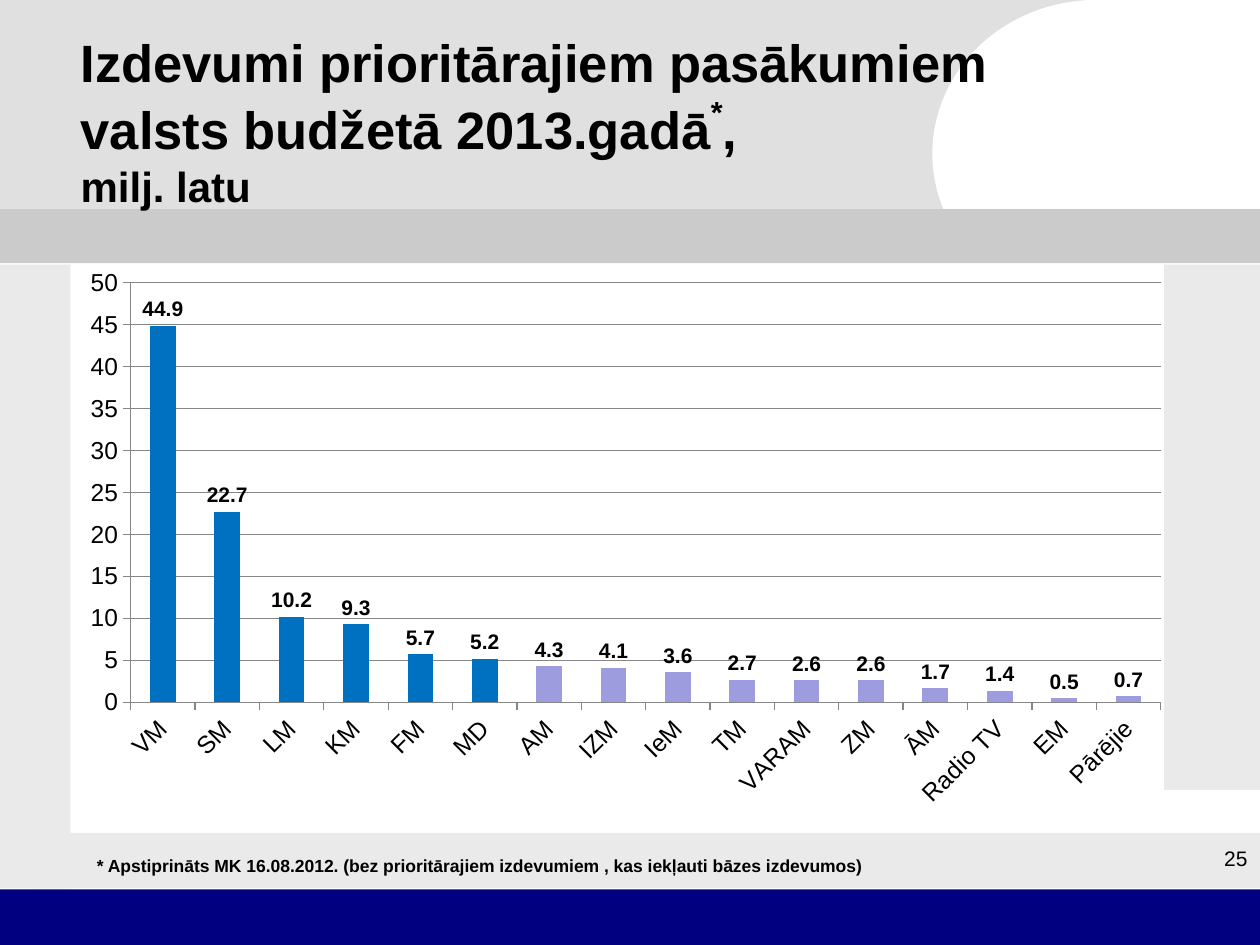
from lxml import etree
from pptx import Presentation
from pptx.chart.data import CategoryChartData
from pptx.dml.color import RGBColor
from pptx.enum.chart import XL_CHART_TYPE, XL_LABEL_POSITION, XL_TICK_MARK
from pptx.enum.shapes import MSO_SHAPE
from pptx.enum.text import MSO_ANCHOR, MSO_AUTO_SIZE, PP_ALIGN
from pptx.oxml.ns import qn
from pptx.util import Inches, Pt

RECTANGLE = MSO_SHAPE.RECTANGLE
OVAL = MSO_SHAPE.OVAL
LEFT = PP_ALIGN.LEFT
RIGHT = PP_ALIGN.RIGHT
MIDDLE = MSO_ANCHOR.MIDDLE
COLUMNS = XL_CHART_TYPE.COLUMN_CLUSTERED
OUTSIDE_END = XL_LABEL_POSITION.OUTSIDE_END
TICK_OUTSIDE = XL_TICK_MARK.OUTSIDE

BLACK, WHITE, NAVY = "000000", "FFFFFF", "000080"
HEADER_GRAY, BAND_GRAY, SIDE_GRAY = "E0E0E0", "CBCBCB", "EAEAEA"
LARGE_BAR, SMALL_BAR, GRID = "0070C0", "9C9CDF", "868686"
LARGE_BAR_COUNT = 6

BACKDROP = [
    (RECTANGLE, (0, 0, 9.09, 1.69), HEADER_GRAY),
    (OVAL, (7.4, 0, 2.6, 2.44), WHITE),
    (RECTANGLE, (0, 2.1, 0.56, 4.95), SIDE_GRAY),
    (RECTANGLE, (0.26, 6.61, 9.74, 0.44), SIDE_GRAY),
    (RECTANGLE, (0, 7.06, 10, 0.44), NAVY),
    (RECTANGLE, (9.24, 2.1, 0.76, 4.17), SIDE_GRAY),
    (RECTANGLE, (8.62, 0, 1.38, 2.02), WHITE),
    (RECTANGLE, (0, 1.66, 10, 0.43), BAND_GRAY),
]

EXPENSES = {
    "VM": 44.9, "SM": 22.7, "LM": 10.2, "KM": 9.3, "FM": 5.7, "MD": 5.2,
    "AM": 4.3, "IZM": 4.1, "IeM": 3.6, "TM": 2.7, "VARAM": 2.6, "ZM": 2.6,
    "ĀM": 1.7, "Radio TV": 1.4, "EM": 0.5, "Pārējie": 0.7,
}


def color(value):
    return RGBColor.from_string(value)


def box(area):
    return [Inches(length) for length in area]


class SlideBuilder:
    font_name = "Arial"

    def __init__(self, presentation):
        self.slide = presentation.slides.add_slide(presentation.slide_layouts[5])
        self.shapes = self.slide.shapes

    def style(self, font, size, bold=False):
        font.name = self.font_name
        font.size = Pt(size)
        font.bold = bold
        font.color.rgb = color(BLACK)

    def panel(self, kind, area, fill):
        shape = self.shapes.add_shape(kind, *box(area))
        shape.shadow.inherit = False
        shape.fill.solid()
        shape.fill.fore_color.rgb = color(fill)
        shape.line.fill.background()

    def title(self, area, heading, mark, ending, unit):
        title = self.shapes.title
        title.left, title.top, title.width, title.height = box(area)
        self.shapes._spTree.append(title._element)
        frame = title.text_frame
        frame.auto_size = MSO_AUTO_SIZE.NONE
        frame.vertical_anchor = MIDDLE
        paragraph = frame.paragraphs[0]
        paragraph.alignment = LEFT
        self.style(paragraph.font, 30, True)
        for text in (heading, mark, ending):
            run = paragraph.add_run()
            run.text = text
            self.style(run.font, 30, True)
            if text == mark:
                run._r.get_or_add_rPr().set("baseline", "50000")
        paragraph.add_line_break()
        run = paragraph.add_run()
        run.text = unit
        self.style(run.font, 24, True)

    def text(self, area, text, size, bold=False, alignment=LEFT):
        frame = self.shapes.add_textbox(*box(area)).text_frame
        frame.word_wrap = True
        paragraph = frame.paragraphs[0]
        paragraph.text = text
        paragraph.alignment = alignment
        self.style(paragraph.font, size, bold)

    def column_chart(self, area, values, plot_area):
        data = CategoryChartData(number_format="0.0")
        data.categories = list(values)
        data.add_series("Series 1", list(values.values()))
        chart = self.shapes.add_chart(COLUMNS, *box(area), data).chart
        chart.has_legend = False
        chart.has_title = False
        self.style(chart.font, 18)

        for axis in (chart.category_axis, chart.value_axis):
            self.style(axis.tick_labels.font, 14)
            axis.major_tick_mark = TICK_OUTSIDE
            axis.format.line.color.rgb = color(GRID)
        category_text = chart.category_axis._element.find(qn("c:txPr"))
        category_text.find(qn("a:bodyPr")).set("rot", "-2700000")

        value_axis = chart.value_axis
        value_axis.minimum_scale = 0
        value_axis.maximum_scale = 50
        value_axis.major_unit = 5
        value_axis.tick_labels.number_format = "0"
        value_axis.tick_labels.number_format_is_linked = False
        value_axis.major_gridlines.format.line.color.rgb = color(GRID)

        plot = chart.plots[0]
        plot.gap_width = 150
        plot.vary_by_categories = False
        series = plot.series[0]
        series.format.fill.solid()
        series.format.fill.fore_color.rgb = color(LARGE_BAR)
        for index in range(LARGE_BAR_COUNT, len(values)):
            fill = series.points[index].format.fill
            fill.solid()
            fill.fore_color.rgb = color(SMALL_BAR)
        labels = series.data_labels
        labels.show_value = True
        labels.position = OUTSIDE_END
        labels.number_format = "0.0"
        labels.number_format_is_linked = False
        self.style(labels.font, 12, True)
        self.place_plot(chart, plot_area)

    def place_plot(self, chart, plot_area):
        plot_element = chart._chartSpace.chart.plotArea
        layout = plot_element.find(qn("c:layout"))
        if layout is None:
            layout = etree.Element(qn("c:layout"))
            plot_element.insert(0, layout)
        manual = etree.SubElement(layout, qn("c:manualLayout"))
        settings = [("layoutTarget", "inner"), ("xMode", "edge"), ("yMode", "edge")]
        settings += zip("xywh", plot_area)
        for name, value in settings:
            etree.SubElement(manual, qn(f"c:{name}")).set("val", str(value))


def main():
    presentation = Presentation()
    presentation.slide_width = Inches(10)
    presentation.slide_height = Inches(7.5)
    builder = SlideBuilder(presentation)
    for kind, area, fill in BACKDROP:
        builder.panel(kind, area, fill)
    builder.title(
        (0.54, 0.33, 7.84, 1.25),
        "Izdevumi prioritārajiem pasākumiem valsts budžetā 2013.gadā",
        "*", ", ", "milj. latu",
    )
    builder.text((7.74, 6.66, 2.26, 0.5), "25", 12, alignment=RIGHT)
    builder.column_chart((0.51, 2.02, 8.79, 4.5), EXPENSES, (0.06, 0.05, 0.93, 0.74))
    builder.text(
        (0.67, 6.74, 9.29, 0.27),
        "* Apstiprināts MK 16.08.2012. (bez prioritārajiem izdevumiem , "
        "kas iekļauti bāzes izdevumos)",
        10, bold=True,
    )
    presentation.save("out.pptx")


if __name__ == "__main__":
    main()
